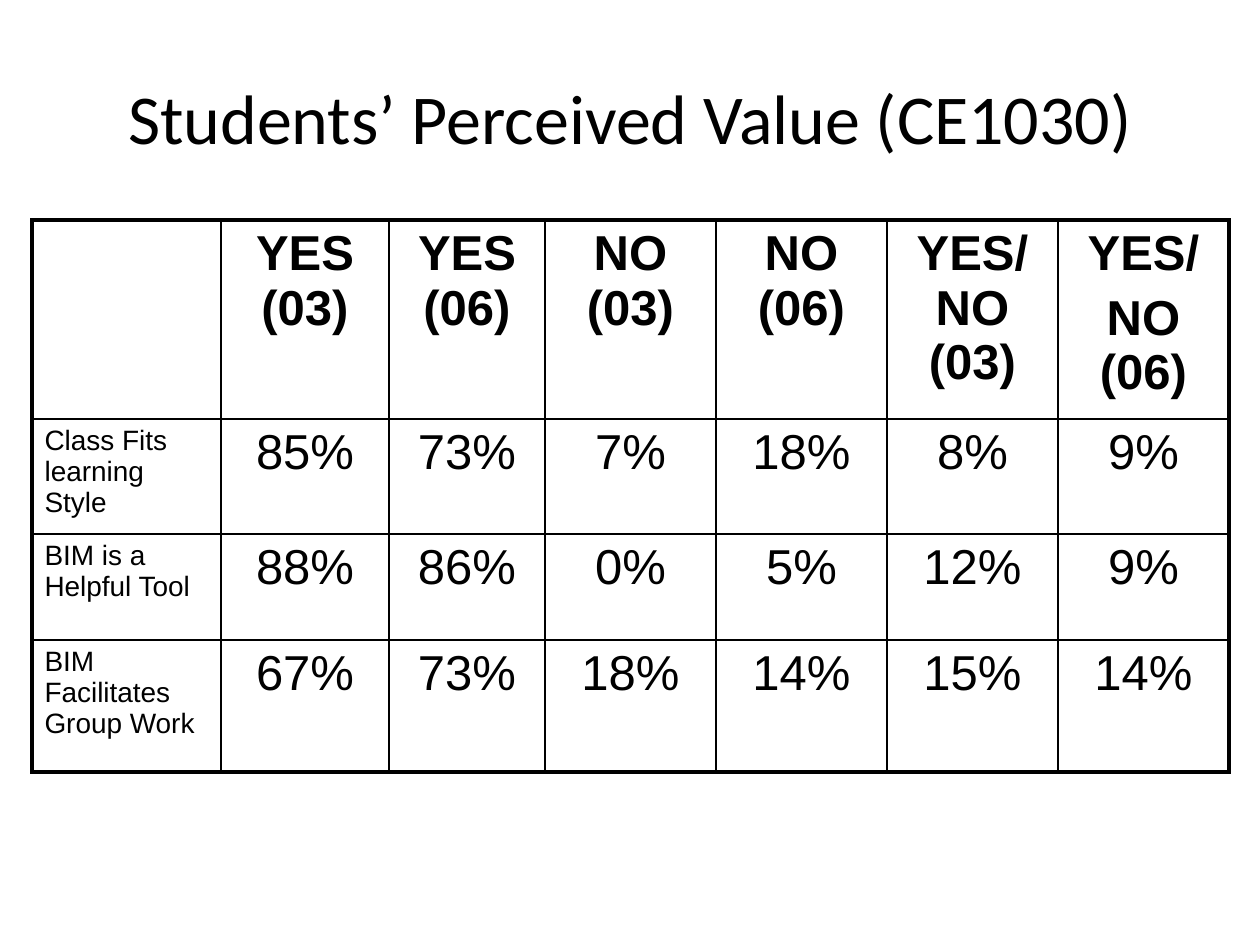
from lxml import etree
from pptx import Presentation
from pptx.dml.color import RGBColor
from pptx.enum.text import MSO_ANCHOR, PP_ALIGN
from pptx.oxml.ns import qn
from pptx.util import Pt

CENTER, LEFT, MIDDLE = PP_ALIGN.CENTER, PP_ALIGN.LEFT, MSO_ANCHOR.MIDDLE
SCALE = 914400 / 126
BLACK = "000000"
THIN, THICK = 1, 2.25

TITLE = "Students’ Perceived Value (CE1030)"
TITLE_BOX = (63, 38, 1134, 158)
TABLE_ORIGIN = (32, 220)
COLUMN_WIDTHS = [189, 168, 156] + [171] * 4
ROW_HEIGHTS = [187, 115, 106, 132]
HEADERS = ["", "YES (03)", "YES (06)", "NO (03)", "NO (06)", "YES/NO (03)", "YES/\nNO (06)"]
RESULTS = [
    ["Class Fits learning Style", "85%", "73%", "7%", "18%", "8%", "9%"],
    ["BIM is a Helpful Tool", "88%", "86%", "0%", "5%", "12%", "9%"],
    ["BIM Facilitates Group Work", "67%", "73%", "18%", "14%", "15%", "14%"],
]


def px(value):
    return round(value * SCALE)


def color(value):
    return RGBColor.from_string(value)


def write(text_frame, text, font_name, size, alignment, bold=False):
    for index, line in enumerate(text.split("\n")):
        paragraph = text_frame.add_paragraph() if index else text_frame.paragraphs[0]
        paragraph.alignment = alignment
        if index:
            paragraph.space_before = Pt(size * 0.2)
        if line:
            run = paragraph.add_run()
            run.text = line
            run.font.name = font_name
            run.font.size = Pt(size)
            run.font.bold = bold
            run.font.color.rgb = color(BLACK)


def add_borders(cell, widths):
    properties = cell._tc.get_or_add_tcPr()
    for side, width in widths.items():
        line = etree.SubElement(properties, qn(f"a:ln{side}"), w=str(Pt(width)))
        fill = etree.SubElement(line, qn("a:solidFill"))
        etree.SubElement(fill, qn("a:srgbClr"), val=BLACK)


def add_title(slide):
    text_frame = slide.shapes.add_textbox(*map(px, TITLE_BOX)).text_frame
    text_frame.word_wrap = True
    text_frame.vertical_anchor = MIDDLE
    write(text_frame, TITLE, "Calibri", 40, CENTER)


def add_results_table(slide):
    rows = [HEADERS] + RESULTS
    last_row, last_column = len(rows) - 1, len(HEADERS) - 1
    size = (sum(COLUMN_WIDTHS), sum(ROW_HEIGHTS))
    table = slide.shapes.add_table(len(rows), len(HEADERS), *map(px, TABLE_ORIGIN + size)).table
    table.first_row = table.horz_banding = False
    for column, width in zip(table.columns, COLUMN_WIDTHS):
        column.width = px(width)
    for row, height in zip(table.rows, ROW_HEIGHTS):
        row.height = px(height)
    for row_index, texts in enumerate(rows):
        for column_index, text in enumerate(texts):
            cell = table.cell(row_index, column_index)
            add_borders(cell, {
                "L": THICK if column_index == 0 else THIN,
                "R": THICK if column_index == last_column else THIN,
                "T": THICK if row_index == 0 else THIN,
                "B": THICK if row_index == last_row else THIN,
            })
            cell.fill.background()
            font_size, alignment = (28, CENTER) if column_index else (16, LEFT)
            write(cell.text_frame, text, "Arial", font_size, alignment, row_index == 0)


def main():
    """Build the slide on students' perceived value."""
    presentation = Presentation()
    presentation.slide_width, presentation.slide_height = px(1260), px(945)
    slide = presentation.slides.add_slide(presentation.slide_layouts[6])
    add_title(slide)
    add_results_table(slide)
    presentation.save("out.pptx")


if __name__ == "__main__":
    main()
